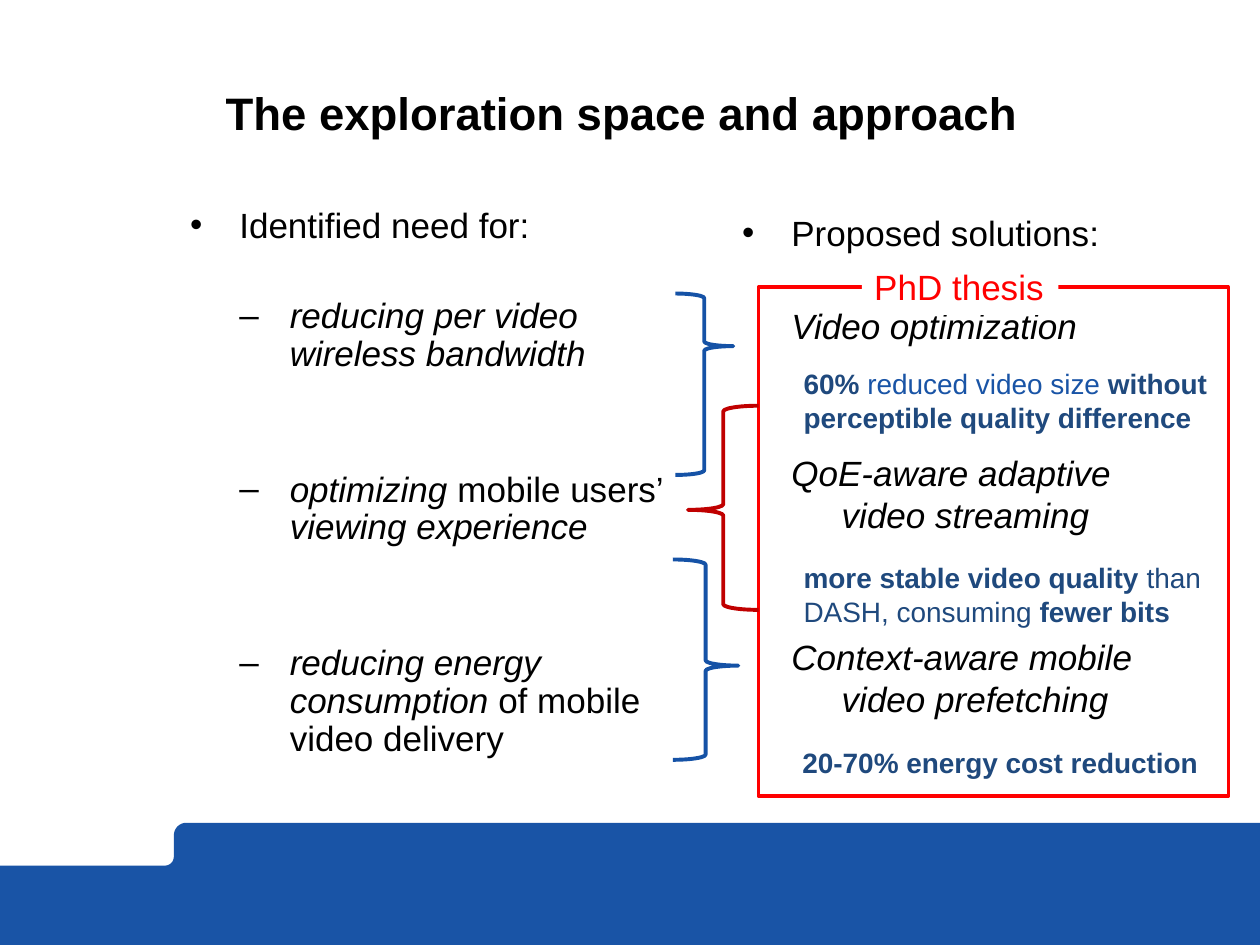
from dataclasses import dataclass
from math import cos, pi, sin

from lxml.etree import SubElement
from pptx import Presentation
from pptx.dml.color import RGBColor
from pptx.enum.shapes import MSO_SHAPE
from pptx.enum.text import MSO_ANCHOR, PP_ALIGN
from pptx.oxml.ns import qn
from pptx.util import Inches, Pt


@dataclass(frozen=True)
class Theme:
    font: str = "Arial"
    black: str = "000000"
    white: str = "FFFFFF"
    band: str = "1954A6"
    blue_brace: str = "1552A6"
    red_brace: str = "C00000"
    frame: str = "FF0000"
    result: str = "1F497D"
    title_size: int = 26
    body_size: int = 20
    result_size: int = 16


theme = Theme()


def add_runs(paragraph, runs, size):
    for text, color, bold, italic in runs:
        run = paragraph.add_run()
        run.text = text
        run.font.name = theme.font
        run.font.size = Pt(size)
        run.font.color.rgb = RGBColor.from_string(color)
        run.font.bold = bold
        run.font.italic = italic


def add_text_box(left, top, width, height, inset=True):
    shape = slide.shapes.add_textbox(Inches(left), Inches(top), Inches(width), Inches(height))
    text_frame = shape.text_frame
    text_frame.word_wrap = True
    if not inset:
        text_frame.margin_left = text_frame.margin_right = 0
        text_frame.margin_top = text_frame.margin_bottom = 0
    return text_frame


presentation = Presentation()
presentation.slide_width = Inches(10)
presentation.slide_height = Inches(7.5)
slide = presentation.slides.add_slide(presentation.slide_layouts[6])

band_points = [(0, 7.52), (0, 6.87)]
for center_x, center_y, radius, start, sweep in [
    (1.31, 6.8, 0.07, pi / 2, -pi / 2),
    (1.48, 6.63, 0.1, pi, pi / 2),
]:
    for step in range(9):
        angle = start + sweep * step / 8
        band_points.append((center_x + radius * cos(angle), center_y + radius * sin(angle)))
band_points += [(10, 6.53), (10, 7.52)]
builder = slide.shapes.build_freeform(Inches(0), Inches(7.52))
builder.add_line_segments([(Inches(x), Inches(y)) for x, y in band_points[1:]])
band = builder.convert_to_shape()
band.shadow.inherit = False
band.fill.solid()
band.fill.fore_color.rgb = RGBColor.from_string(theme.band)
band.line.fill.background()

title_frame = add_text_box(1.79, 0.38, 7.59, 0.73, inset=False)
title_frame.vertical_anchor = MSO_ANCHOR.BOTTOM
title = title_frame.paragraphs[0]
title.line_spacing = Pt(30)
add_runs(title, [("The exploration space and approach", theme.black, True, False)], theme.title_size)

columns = [
    (1.51, 1.65, 3.87, 4.68, 0.9, [
        ("•", 0, [("Identified need for:", False)]),
        ("–", 30, [("reducing per video wireless bandwidth", True)]),
        ("–", 56, [("optimizing", True), (" mobile users’ ", False), ("viewing experience", True)]),
        ("–", 56, [("reducing energy consumption", True), (" of mobile video delivery", False)]),
    ]),
    (5.89, 1.68, 3.65, 4.46, 1.0, [
        ("•", 0, [("Proposed solutions:", False)]),
        (None, 29, [("Video optimization", True)]),
        (None, 60, [("QoE-aware adaptive video streaming", True)]),
        (None, 57, [("Context-aware mobile video prefetching", True)]),
    ]),
]
for left, top, width, height, line_spacing, items in columns:
    text_frame = add_text_box(left, top, width, height, inset=False)
    for index, (bullet, space_before, parts) in enumerate(items):
        paragraph = text_frame.add_paragraph() if index else text_frame.paragraphs[0]
        paragraph.level = 1 if index else 0
        paragraph.line_spacing = line_spacing
        paragraph.space_before = Pt(space_before)
        properties = paragraph._p.get_or_add_pPr()
        properties.set("marL", str(Inches(0.79 if index else 0.39)))
        properties.set("indent", str(Inches(-0.4 if index else -0.39)))
        if bullet:
            SubElement(properties, qn("a:buFont")).set("typeface", theme.font)
            SubElement(properties, qn("a:buChar")).set("char", bullet)
        else:
            SubElement(properties, qn("a:buNone"))
        runs = [(text, theme.black, False, italic) for text, italic in parts]
        add_runs(paragraph, runs, theme.body_size)

shapes = [
    (MSO_SHAPE.RIGHT_BRACE, 5.36, 2.33, 0.46, 1.44, theme.blue_brace, 2.25, 0.29, 0),
    (MSO_SHAPE.RIGHT_BRACE, 5.34, 4.44, 0.52, 1.59, theme.blue_brace, 2.25, 0.53, 0),
    (MSO_SHAPE.RECTANGLE, 6.02, 2.28, 3.73, 4.04, theme.frame, 2, None, 0),
    (MSO_SHAPE.RECTANGLE, 6.84, 2.06, 1.56, 0.44, None, 0, None, 0),
    (MSO_SHAPE.RIGHT_BRACE, 5.46, 3.22, 0.56, 1.62, theme.red_brace, 2.25, 0.49, 180),
]
for kind, left, top, width, height, color, line_width, point, rotation in shapes:
    shape = slide.shapes.add_shape(kind, Inches(left), Inches(top), Inches(width), Inches(height))
    shape.shadow.inherit = False
    shape.rotation = rotation
    if point:
        shape.adjustments[0] = 0.08
        shape.adjustments[1] = point
    if color:
        shape.fill.background()
        shape.line.color.rgb = RGBColor.from_string(color)
        shape.line.width = Pt(line_width)
    else:
        shape.fill.solid()
        shape.fill.fore_color.rgb = RGBColor.from_string(theme.white)
        shape.line.fill.background()
        text_frame = shape.text_frame
        text_frame.word_wrap = False
        text_frame.vertical_anchor = MSO_ANCHOR.TOP
        label = text_frame.paragraphs[0]
        label.alignment = PP_ALIGN.LEFT
        add_runs(label, [("PhD thesis", theme.frame, False, False)], theme.body_size)

results = [
    (6.28, 2.86, 0.64, [
        ("60% ", theme.result, True),
        ("reduced video size ", theme.band, False),
        ("without perceptible quality difference", theme.result, True),
    ]),
    (6.27, 5.87, 0.37, [("20-70% energy cost reduction", theme.result, True)]),
    (6.28, 4.4, 0.64, [
        ("more stable video quality", theme.result, True),
        (" than DASH, consuming ", theme.result, False),
        ("fewer bits", theme.result, True),
    ]),
]
for left, top, height, parts in results:
    text_frame = add_text_box(left, top, 3.46, height)
    runs = [(text, color, bold, False) for text, color, bold in parts]
    add_runs(text_frame.paragraphs[0], runs, theme.result_size)

presentation.save("out.pptx")
